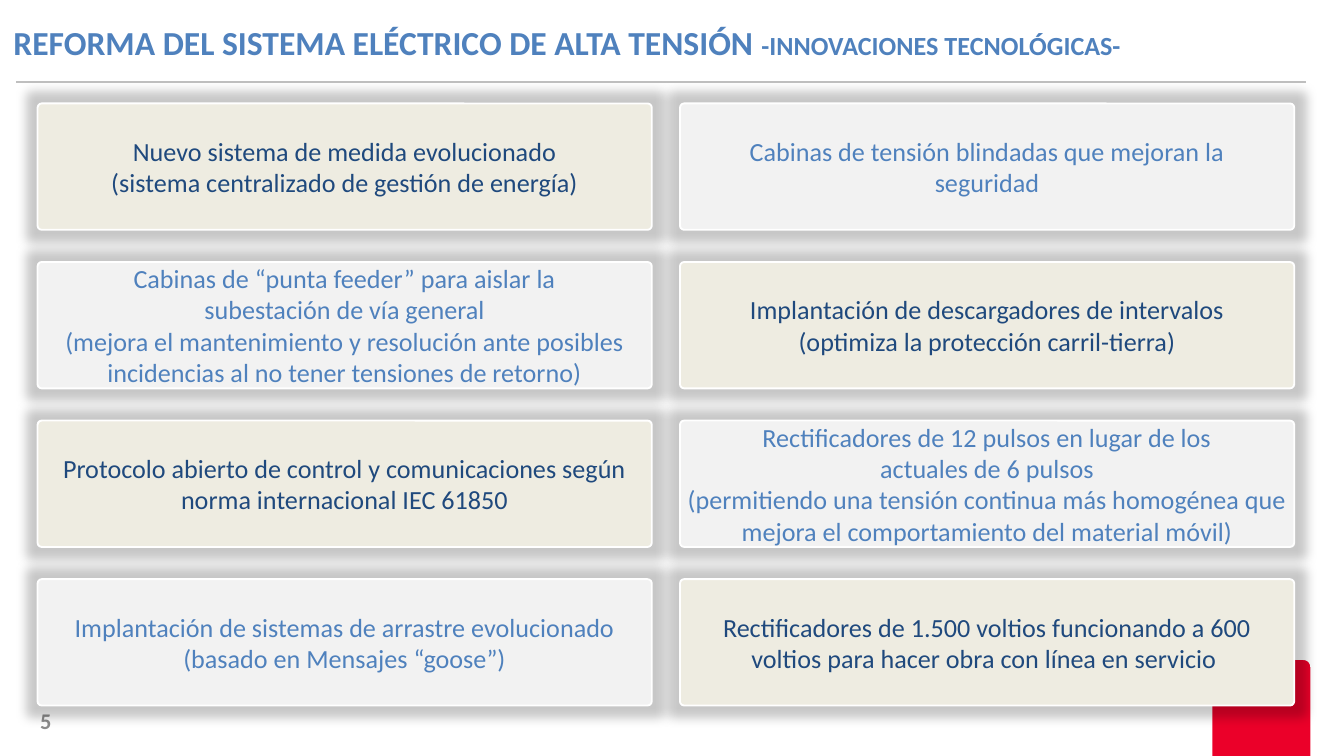
import pptx
import pptx.util
import pptx.dml.color
import pptx.enum.shapes
import pptx.enum.text
import pptx.oxml
import pptx.oxml.ns
from dataclasses import dataclass

# Content: cards row by row, each a list of paragraphs
TITLE = [("REFORMA DEL SISTEMA ELÉCTRICO DE ALTA TENSIÓN ", 18),
         ("-INNOVACIONES TECNOLÓGICAS-", 14)]
PAGE_NUMBER = "5"
CARDS = [
    [["Nuevo sistema de medida evolucionado",
      "(sistema centralizado de gestión de energía)"],
     ["Cabinas de tensión blindadas que mejoran la seguridad"]],
    [["Cabinas de “punta feeder” para aislar la",
      "subestación de vía general",
      "(mejora el mantenimiento y resolución ante posibles "
      "incidencias al no tener tensiones de retorno)"],
     ["Implantación de descargadores de intervalos",
      "(optimiza la protección carril-tierra)"]],
    [["Protocolo abierto de control y comunicaciones según "
      "norma internacional IEC 61850"],
     ["Rectificadores de 12 pulsos en lugar de los",
      "actuales de 6 pulsos",
      "(permitiendo una tensión continua más homogénea que "
      "mejora el comportamiento del material móvil)"]],
    [["Implantación de sistemas de arrastre evolucionado "
      "(basado en Mensajes “goose”)"],
     ["Rectificadores de 1.500 voltios funcionando a 600 "
      "voltios para hacer obra con línea en servicio "]],
]


@dataclass(frozen=True)
class Theme:
    font: str = "Calibri"
    blue: str = "4F81BD"
    navy: str = "1F497D"
    cream: str = "EEECE1"
    light: str = "F2F2F2"
    white: str = "FFFFFF"
    red: str = "EB0029"
    rule: str = "BFBFBF"
    grey: str = "8C8C8C"
    halo: str = "000000"
    card_size: int = 14
    number_size: int = 12


THEME = Theme()
CARD_STYLES = [(THEME.cream, THEME.navy), (THEME.light, THEME.blue)]

# Slide in 16:9 and grid of cards, in inches
SLIDE_WIDTH = 10
SLIDE_HEIGHT = SLIDE_WIDTH * 9 / 16
GRID_LEFT, GRID_TOP = 0.28, 0.77
CARD_WIDTH, CARD_HEIGHT = 4.57, 0.94
COLUMN_STEP, ROW_STEP = 4.78, 1.18

inches = pptx.util.Inches
middle = pptx.enum.text.MSO_ANCHOR.MIDDLE


def rgb(color):
    return pptx.dml.color.RGBColor.from_string(color)


def add_run(paragraph, text, size, color, bold=False):
    run = paragraph.add_run()
    run.text = text
    run.font.name = THEME.font
    run.font.size = pptx.util.Pt(size)
    run.font.bold = bold
    run.font.color.rgb = rgb(color)


def add_rounded(slide, box, radius, fill, line_width):
    shape = slide.shapes.add_shape(
        pptx.enum.shapes.MSO_SHAPE.ROUNDED_RECTANGLE, *map(inches, box))
    shape.adjustments[0] = radius
    shape.shadow.inherit = False
    shape.fill.solid()
    shape.fill.fore_color.rgb = rgb(fill)
    shape.line.color.rgb = rgb(THEME.white)
    shape.line.width = pptx.util.Pt(line_width)
    return shape


def add_halo(shape):
    effects = shape.element.spPr.find(pptx.oxml.ns.qn("a:effectLst"))
    effects.append(pptx.oxml.parse_xml(
        f'<a:glow {pptx.oxml.ns.nsdecls("a")} rad="{inches(0.16)}">'
        f'<a:srgbClr val="{THEME.halo}"><a:alpha val="22000"/></a:srgbClr>'
        '</a:glow>'))


def add_card(slide, row, column, lines):
    fill, color = CARD_STYLES[(row + column) % 2]
    box = (GRID_LEFT + column * COLUMN_STEP, GRID_TOP + row * ROW_STEP,
           CARD_WIDTH, CARD_HEIGHT)
    card = add_rounded(slide, box, 0.033, fill, 1)
    add_halo(card)
    frame = card.text_frame
    frame.word_wrap = True
    frame.vertical_anchor = middle
    frame.margin_left = frame.margin_right = inches(0.2 if row == 0 else 0.04)
    frame.margin_top = frame.margin_bottom = inches(0.04)
    for index, line in enumerate(lines):
        paragraph = frame.add_paragraph() if index else frame.paragraphs[0]
        paragraph.alignment = pptx.enum.text.PP_ALIGN.CENTER
        add_run(paragraph, line, THEME.card_size, color)


def main():
    presentation = pptx.Presentation()
    presentation.slide_width = inches(SLIDE_WIDTH)
    presentation.slide_height = inches(SLIDE_HEIGHT)
    slide = presentation.slides.add_slide(presentation.slide_layouts[5])

    # Corner block, page number and rule
    add_rounded(slide, (8.99, 4.88, 0.79, 1), 0.103, THEME.red, 4.5)
    number = slide.shapes.add_textbox(*map(inches, (0.2, 5.21, 2.33, 0.3)))
    number.text_frame.word_wrap = True
    number.text_frame.vertical_anchor = middle
    add_run(number.text_frame.paragraphs[0], PAGE_NUMBER,
            THEME.number_size, THEME.grey, bold=True)
    rule = slide.shapes.add_connector(
        pptx.enum.shapes.MSO_CONNECTOR.STRAIGHT,
        *map(inches, (0.12, 0.61, 9.72, 0.61)))
    rule.line.color.rgb = rgb(THEME.rule)
    rule.line.width = pptx.util.Pt(1.5)
    rule.element.spPr.append(pptx.oxml.parse_xml(
        f'<a:effectLst {pptx.oxml.ns.nsdecls("a")}/>'))

    # Title
    title = slide.shapes.title
    title.left, title.top, title.width, title.height = map(
        inches, (0, 0.11, 9.69, 0.4))
    frame = title.text_frame
    frame.word_wrap = True
    frame.auto_size = pptx.enum.text.MSO_AUTO_SIZE.NONE
    frame.vertical_anchor = pptx.enum.text.MSO_ANCHOR.TOP
    frame.paragraphs[0].alignment = pptx.enum.text.PP_ALIGN.LEFT
    for text, size in TITLE:
        add_run(frame.paragraphs[0], text, size, THEME.blue, bold=True)

    # Cards
    for row, cards in enumerate(CARDS):
        for column, lines in enumerate(cards):
            add_card(slide, row, column, lines)

    presentation.save("out.pptx")


if __name__ == "__main__":
    main()
